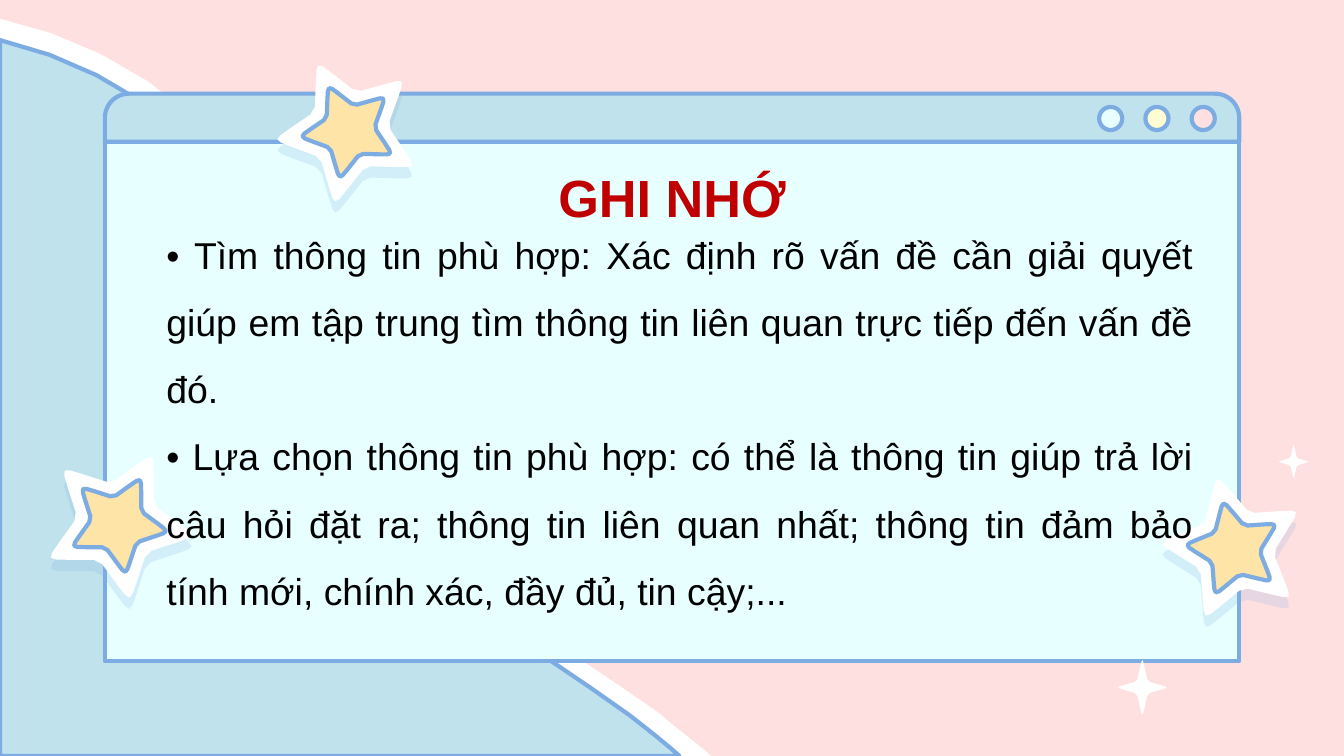
"""Build the "GHI NHỚ" summary slide with a window frame and stars."""
from math import cos, pi, radians, sin

from lxml import etree
from pptx import Presentation
from pptx.dml.color import RGBColor
from pptx.enum.shapes import MSO_SHAPE
from pptx.enum.text import PP_ALIGN
from pptx.oxml.ns import qn
from pptx.util import Pt

RECT = MSO_SHAPE.RECTANGLE
TAB = MSO_SHAPE.ROUND_2_SAME_RECTANGLE
OVAL = MSO_SHAPE.OVAL
CENTER = PP_ALIGN.CENTER
JUSTIFY = PP_ALIGN.JUSTIFY
WHITE = RGBColor(0xFF, 0xFF, 0xFF)
BLACK = RGBColor(0, 0, 0)
RED = RGBColor(0xC0, 0, 0)
PINK = RGBColor(0xFF, 0xE0, 0xE1)
SKY = RGBColor(0xBF, 0xE2, 0xEC)
ICE = RGBColor(0xE7, 0xFF, 0xFF)
CREAM = RGBColor(0xFF, 0xFD, 0xD1)
GOLD = RGBColor(0xFE, 0xE4, 0xA7)
BLUE = RGBColor(0x7C, 0xAC, 0xE1)

deck = Presentation()
deck.slide_width, deck.slide_height = Pt(720), Pt(405)
slide = deck.slides.add_slide(deck.slide_layouts[6])
slide.background.fill.solid()
slide.background.fill.fore_color.rgb = PINK
shapes = slide.shapes


def paint(shape, fill, edge):
    shape.shadow.inherit = False
    shape.fill.solid()
    shape.fill.fore_color.rgb = fill
    if edge:
        shape.line.color.rgb = BLUE
        shape.line.width = Pt(2.25)
    else:
        shape.line.fill.background()
    return shape


def trace(curves, fill, edge):
    dots = []
    for steps, a, b, c, d in curves:
        for step in range(steps + 1):
            t = step / steps
            u = 1 - t
            mix = (u ** 3, 3 * u * u * t, 3 * u * t * t, t ** 3)
            dot = [Pt(sum(m * p[k] for m, p in zip(mix, (a, b, c, d))))
                   for k in (0, 1)]
            if dot not in dots:
                dots.append(dot)
    pen = shapes.build_freeform(*dots[0])
    pen.add_line_segments(dots[1:], close=True)
    return paint(pen.convert_to_shape(), fill, edge)


WAVES = [
    (WHITE, False, [(0, 10), (56, 22), (108, 56), (140, 104), (176, 160),
                    (186, 230), (228, 284), (261, 325), (310, 351), (353, 382),
                    (362, 390), (372, 397), (381, 405)]),
    (SKY, True, [(0, 21.5), (54, 34), (103, 66), (133, 113), (168, 167),
                 (179, 235), (218, 287), (249, 328), (296, 353), (337, 383),
                 (346, 390), (355, 397), (364, 405)]),
]
for fill, edge, knots in WAVES:
    curves = [(6, *knots[i:i + 4]) for i in range(0, 12, 3)]
    curves.append((1, *[(0, 405)] * 4))
    trace(curves, fill, edge)

paint(shapes.add_shape(RECT, Pt(56.2), Pt(75.8), Pt(607.7), Pt(278.6)), ICE, True)
head = shapes.add_shape(TAB, Pt(56.2), Pt(50.2), Pt(607.7), Pt(25.8))
head.adjustments[0] = 0.5
head.adjustments[1] = 0
paint(head, SKY, True)

STARS = [(187, 70, 29, 1), (63, 280.5, 9, 1.04), (661.2, 294.3, 41, 1)]
figures = [(693, 247.4, 4, 9.6, 2.8, 0, 0.88, WHITE, False),
           (612, 368.3, 4, 16, 4.6, 0, 0.88, WHITE, False)]
for x, y, turn, size in STARS:
    figures.append((x, y, 5, 41 * size, 21 * size, turn, 1, WHITE, False))
    figures.append((x, y, 5, 26.7 * size, 13.7 * size, turn, 1, GOLD, True))

for x, y, count, outer, inner, turn, slim, fill, edge in figures:
    tips = []
    for i in range(2 * count):
        reach = inner if i % 2 else outer
        angle = radians(turn) + i * pi / count
        tips.append((x + slim * reach * cos(angle), y + reach * sin(angle)))
    curves = []
    for i, tip in enumerate(tips):
        steps, trim = (1, 0.1) if i % 2 else (4, 0.4)
        near, far = [
            [p + trim * (q - p) for p, q in zip(tip, mate)]
            for mate in (tips[i - 1], tips[(i + 1) % len(tips)])]
        curves.append((steps, near, tip, tip, far))
    star = trace(curves, fill, edge)
    if count == 5 and not edge:
        glow = star._element.spPr.find(qn("a:effectLst"))
        shade = etree.SubElement(glow, qn("a:outerShdw"), blurRad="0",
                                 dist=str(int(Pt(6))), dir="5400000",
                                 algn="bl", rotWithShape="0")
        tint = etree.SubElement(shade, qn("a:srgbClr"), val=str(BLUE))
        etree.SubElement(tint, qn("a:alpha"), val="18000")

for i, fill in enumerate((ICE, CREAM, PINK)):
    dot = shapes.add_shape(OVAL, Pt(588.8 + 24.8 * i), Pt(57.3), Pt(12.4), Pt(12.4))
    paint(dot, fill, True)

TEXTS = [
    ((0, 68.4, 720, 51.8), CENTER, 28, RED, True, ["GHI NHỚ"]),
    ((82.1, 108.7, 564.5, 225.4), JUSTIFY, 20, BLACK, False, [
        "• Tìm thông tin phù hợp: Xác định rõ vấn đề cần giải quyết giúp em "
        "tập trung tìm thông tin liên quan trực tiếp đến vấn đề đó.",
        "• Lựa chọn thông tin phù hợp: có thể là thông tin giúp trả lời câu "
        "hỏi đặt ra; thông tin liên quan nhất; thông tin đảm bảo tính mới, "
        "chính xác, đầy đủ, tin cậy;..."]),
]
for place, align, size, color, bold, lines in TEXTS:
    frame = shapes.add_textbox(*map(Pt, place)).text_frame
    frame.word_wrap = True
    for i, line in enumerate(lines):
        para = frame.add_paragraph() if i else frame.paragraphs[0]
        para.alignment = align
        para.line_spacing = 1.5
        run = para.add_run()
        run.text = line
        run.font.name = "Arial"
        run.font.size = Pt(size)
        run.font.bold = bold
        run.font.color.rgb = color

deck.save("out.pptx")
